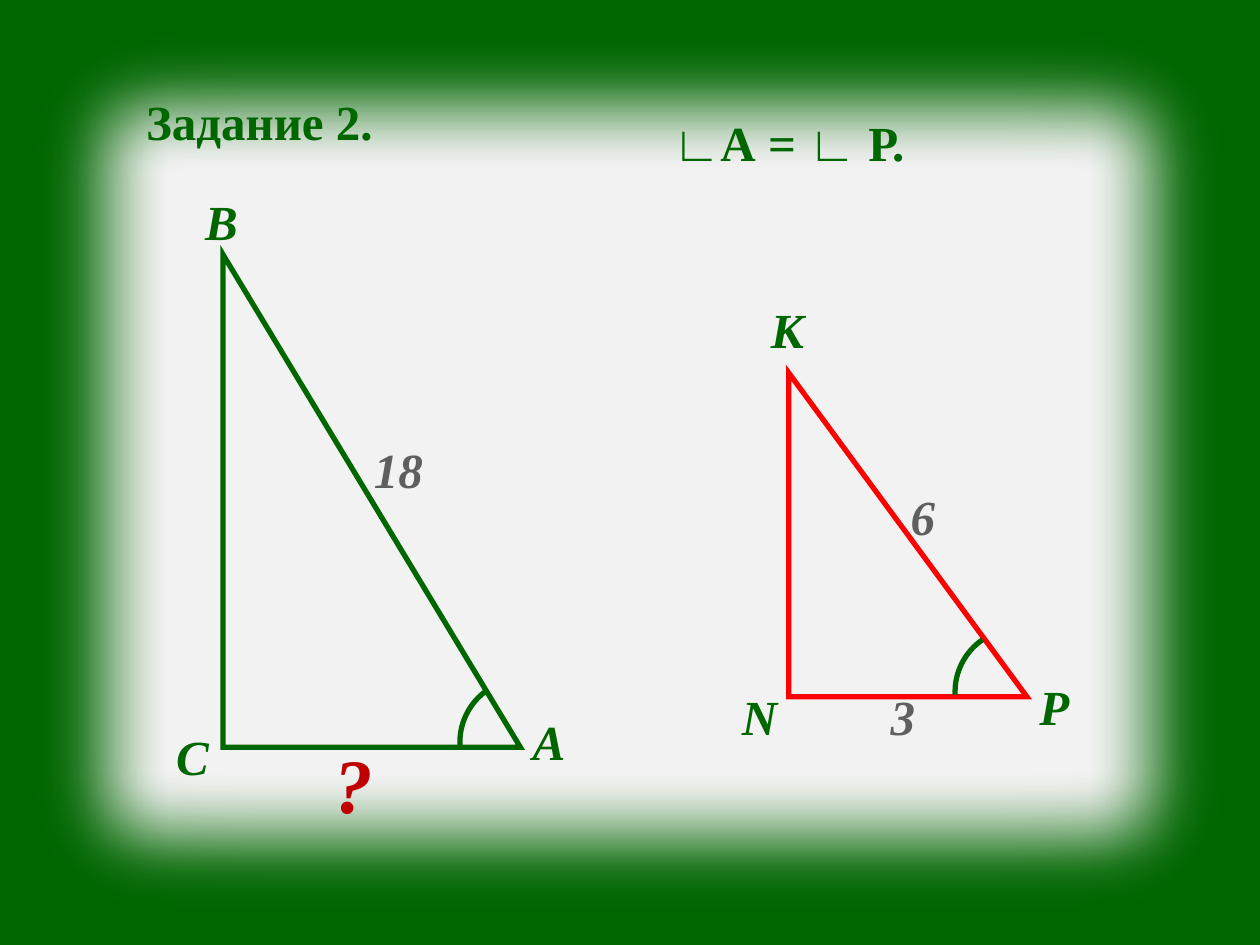
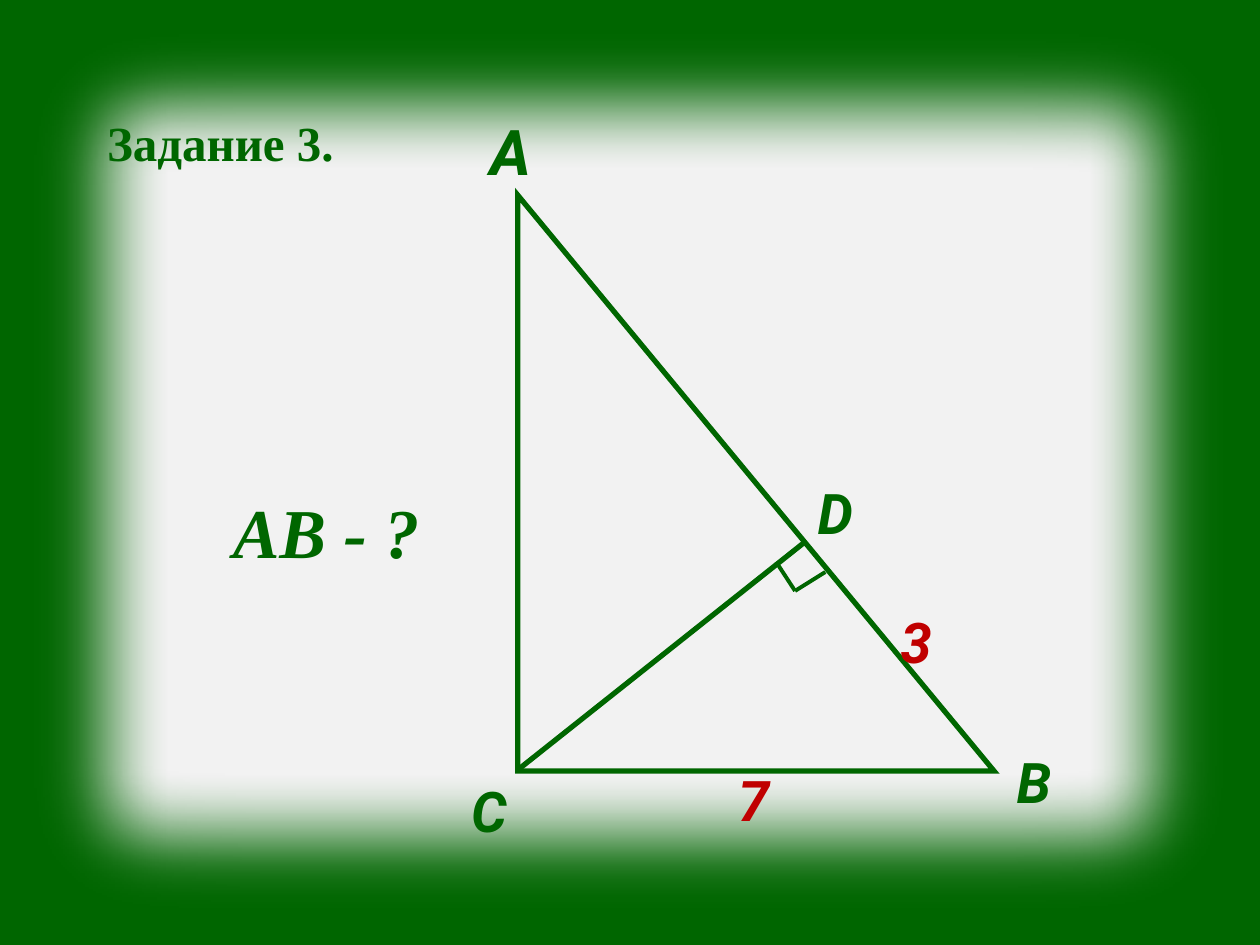
from lxml.etree import SubElement
from pptx import Presentation
from pptx.dml.color import RGBColor
from pptx.enum.shapes import MSO_CONNECTOR, MSO_SHAPE
from pptx.enum.text import MSO_ANCHOR, MSO_AUTO_SIZE, PP_ALIGN
from pptx.oxml.ns import qn
from pptx.util import Inches, Pt

GREEN, RED, DARK_RED, GRAY, PANEL = "006600", "FF0000", "C00000", "5F5F5F", "F2F2F2"
SERIF, SANS = "Times New Roman", "Roboto"

prs = Presentation()
prs.slide_width, prs.slide_height = Inches(10), Inches(7.5)
COL, ROW = prs.slide_width / 100, prs.slide_height / 75  # square grid cells


def write(sp, box, text, size, color=GREEN, font=SERIF, italic=True, wrap=False):
    """Place sp at box (left, top, width in cells), one line high, and fill in its text."""
    left, top, width = box
    sp.left, sp.top, sp.width = int(left * COL), int(top * ROW), int(width * COL)
    sp.height = Pt(1.2 * size) + Inches(0.1)
    tf = sp.text_frame
    tf.word_wrap = wrap
    tf.auto_size = MSO_AUTO_SIZE.SHAPE_TO_FIT_TEXT
    tf.vertical_anchor = MSO_ANCHOR.TOP
    p = tf.paragraphs[0]
    p.alignment = PP_ALIGN.LEFT
    r = p.add_run()
    r.text = text
    r.font.name, r.font.size = font, Pt(size)
    r.font.bold, r.font.italic = True, italic
    r.font.color.rgb = RGBColor.from_string(color)


def outline(s, kind, box, color=GREEN):
    """Add an unfilled preset shape with a sharp-cornered line; box is in cells."""
    left, top, width, height = box
    sp = s.shapes.add_shape(kind, int(left * COL), int(top * ROW),
                            int(width * COL), int(height * ROW))
    sp.shadow.inherit = False
    sp.fill.background()
    sp.line.color.rgb = RGBColor.from_string(color)
    sp.line.width = Pt(3)
    SubElement(sp.line._get_or_add_ln(), qn("a:miter"), lim="800000")
    return sp


# Shared look: green background, soft-edged panel, title
fill = prs.slide_master.background.fill
fill.solid()
fill.fore_color.rgb = RGBColor.from_string(GREEN)

slides = []
for title, box, wrap in [("Задание 2.", (10.6, 6.8, 20.2), False),
                         ("Задание 3.", (7.5, 8.4, 21.7), True)]:
    s = prs.slides.add_slide(prs.slide_layouts[5])
    panel = s.shapes.add_shape(MSO_SHAPE.RECTANGLE, 0, 0, prs.slide_width, prs.slide_height)
    panel.fill.solid()
    panel.fill.fore_color.rgb = RGBColor.from_string(PANEL)
    panel.line.fill.background()
    effects = SubElement(panel._element.spPr, qn("a:effectLst"))
    SubElement(effects, qn("a:softEdge"), rad=str(Pt(50)))
    s.shapes._spTree.insert(2, panel._element)
    write(s.shapes.title, box, title, 28, italic=False, wrap=wrap)
    slides.append(s)
similar, altitude = slides

# Task 2: two right triangles with an equal acute angle
outline(similar, MSO_SHAPE.RIGHT_TRIANGLE, (62.6, 29.6, 18.9, 25.7), RED)
outline(similar, MSO_SHAPE.RIGHT_TRIANGLE, (17.7, 20.2, 23.6, 39.1))

for text, color, box in [
    ("А", GREEN, (41.3, 56, 4.6)),
    ("С", GREEN, (13, 57.2, 4.8)),
    ("В", GREEN, (15.3, 14.7, 4.6)),
    ("N", GREEN, (57.9, 54, 5)),
    ("Р", GREEN, (81.5, 53.2, 4.4)),
    ("К", GREEN, (60.2, 23.3, 4.7)),
    ("3", GRAY, (69.7, 54, 4)),
    ("18", GRAY, (28.7, 34.4, 6)),
    ("6", GRAY, (71.3, 38.1, 4)),
]:
    write(similar.shapes.add_textbox(0, 0, 0, 0), box, text, 28, color)
write(similar.shapes.add_textbox(0, 0, 0, 0), (25.6, 58, 5.1), "?", 44, DARK_RED)
write(similar.shapes.add_textbox(0, 0, 0, 0), (52.4, 8.4, 20.6), "∟А = ∟ Р.", 28, italic=False)

for left, top in [(36.5, 53.9), (75.8, 49.9)]:
    arc = outline(similar, MSO_SHAPE.ARC, (left, top, 10, 10))
    arc.rotation = 262.1
    arc.adjustments[0], arc.adjustments[1] = 165.24, 200.17

# Task 3: right triangle with the altitude CD and its right-angle mark
outline(altitude, MSO_SHAPE.RIGHT_TRIANGLE, (41.1, 15.5, 37.8, 45.7))

for x1, y1, x2, y2, width in [
    (41.1, 61.1, 63.9, 43, 3),
    (61.6, 44.6, 63.1, 46.9, 2.25),
    (63.1, 46.9, 65.5, 45.4, 2.25),
]:
    line = altitude.shapes.add_connector(MSO_CONNECTOR.STRAIGHT, int(x1 * COL), int(y1 * ROW),
                                         int(x2 * COL), int(y2 * ROW))
    line.line.color.rgb = RGBColor.from_string(GREEN)
    line.line.width = Pt(width)
    SubElement(line._element.spPr, qn("a:effectLst"))

for text, size, color, box in [
    ("А", 36, GREEN, (37.9, 8.4, 5.3)),
    ("В", 32, GREEN, (79.7, 58.8, 5)),
    ("7", 32, DARK_RED, (57.6, 60.3, 4.2)),
    ("3", 32, DARK_RED, (70.5, 47.7, 4.2)),
    ("D", 32, GREEN, (63.9, 37.5, 5.6)),
    ("С", 32, GREEN, (36.4, 61.1, 5)),
]:
    write(altitude.shapes.add_textbox(0, 0, 0, 0), box, text, size, color, SANS)
write(altitude.shapes.add_textbox(0, 0, 0, 0), (17.5, 38.3, 17.3), "АВ - ?", 40)

prs.save("out.pptx")
